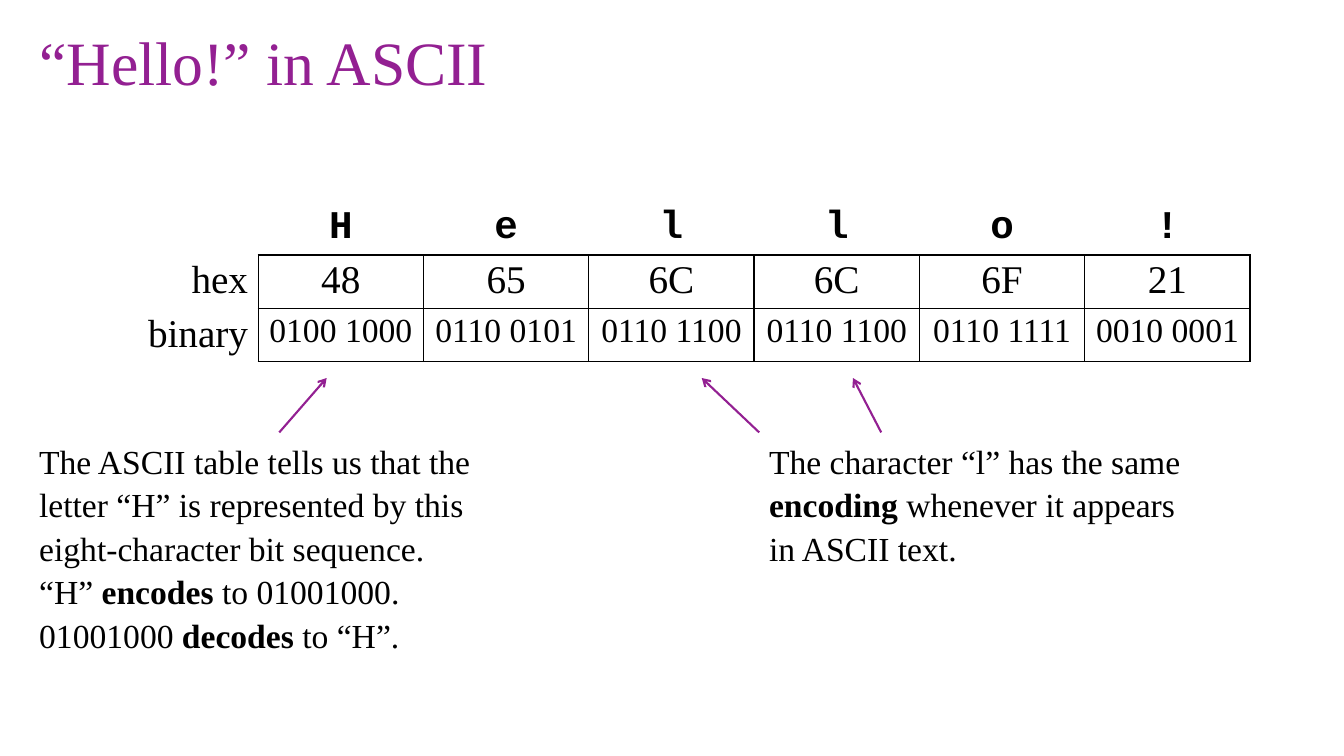
from dataclasses import dataclass

from lxml.etree import SubElement
from pptx import Presentation
from pptx.dml.color import RGBColor
from pptx.enum.shapes import MSO_CONNECTOR
from pptx.enum.text import MSO_ANCHOR, MSO_AUTO_SIZE, PP_ALIGN
from pptx.oxml.ns import qn
from pptx.util import Inches, Pt

COLORS = {"accent": "932092", "text": "000000"}
SERIF = "Times New Roman"
MONO = "Courier New"
NO_STYLE = "{2D5ABB26-0587-4C30-8999-92F81FD0307C}"
WORD = "Hello!"
COLUMN_WIDTH = 1.64
ROW_HEIGHT = 0.53
ARROW_TOP, ARROW_BOTTOM = 3.75, 4.29


@dataclass
class Note:
    left: float
    width: float
    height: float
    paragraphs: list[list[str]]
    bold: tuple[str, ...]


@dataclass
class Arrow:
    start: float
    end: float


NOTES = [
    Note(0.29, 4.96, 2.12, [
        ["The ASCII table tells us that the letter “H” is represented by this "
         "eight-character bit sequence."],
        ["“H” ", "encodes", " to 01001000."],
        ["01001000 ", "decodes", " to “H”."],
    ], ("encodes", "decodes")),
    Note(7.53, 4.5, 1.31, [
        ["The character “l” has the same ", "encoding ",
         "whenever it appears in ASCII text."],
    ], ("encoding ",)),
]
ARROWS = [Arrow(2.77, 3.24), Arrow(7.53, 6.96), Arrow(8.74, 8.46)]


def add_run(p, text: str, *, size: float, font: str = SERIF,
            color: str = "text", bold: bool = False) -> None:
    r = p.add_run()
    r.text = text
    r.font.size = Pt(size)
    r.font.name = font
    r.font.bold = bold
    r.font.color.rgb = RGBColor.from_string(COLORS[color])


def set_borders(cell, sides: str) -> None:
    tcPr = cell._tc.get_or_add_tcPr()
    for side in "LRTB":
        if side in sides:
            ln = SubElement(tcPr, qn(f"a:ln{side}"), w=str(Pt(1)))
            fill = SubElement(ln, qn("a:solidFill"))
            SubElement(fill, qn("a:srgbClr"), val=COLORS["text"])


def add_title(s, text: str) -> None:
    sp = s.shapes.title
    sp.left, sp.top = Inches(0.29), Inches(0.17)
    sp.width, sp.height = Inches(12.73), Inches(0.97)
    tf = sp.text_frame
    tf.vertical_anchor = MSO_ANCHOR.MIDDLE
    p = tf.paragraphs[0]
    p.alignment = PP_ALIGN.LEFT
    p.line_spacing = 0.9
    add_run(p, text, size=44, color="accent")


def fill_cell(cell, text: str, sides: str, align: PP_ALIGN, **fmt) -> None:
    cell.margin_top = cell.margin_bottom = Inches(0.04)
    set_borders(cell, sides)
    cell.fill.background()
    if text:
        p = cell.text_frame.paragraphs[0]
        p.alignment = align
        add_run(p, text, **fmt)


def add_code_table(s, word: str) -> None:
    bits = [f"{ord(char):08b}" for char in word]
    rows = [
        ("", list(word), "", "B", {"size": 28, "font": MONO, "bold": True}),
        ("hex", [f"{ord(char):02X}" for char in word], "R", "LRTB", {"size": 28}),
        ("binary", [f"{b[:4]} {b[4:]}" for b in bits], "R", "LRTB", {"size": 24}),
    ]
    columns = len(word) + 1
    table = s.shapes.add_table(
        len(rows), columns, Inches(0.92), Inches(2),
        Inches(COLUMN_WIDTH * columns), Inches(ROW_HEIGHT * len(rows))).table
    table.first_row = table.horz_banding = False
    table._tbl.tblPr.find(qn("a:tableStyleId")).text = NO_STYLE
    for column in table.columns:
        column.width = Inches(COLUMN_WIDTH)
    for i, (label, values, label_sides, sides, fmt) in enumerate(rows):
        table.rows[i].height = Inches(ROW_HEIGHT)
        fill_cell(table.cell(i, 0), label, label_sides, PP_ALIGN.RIGHT, size=28)
        for j, value in enumerate(values, 1):
            fill_cell(table.cell(i, j), value, sides, PP_ALIGN.CENTER, **fmt)


def add_note(s, note: Note) -> None:
    sp = s.shapes.add_textbox(Inches(note.left), Inches(ARROW_BOTTOM),
                              Inches(note.width), Inches(note.height))
    tf = sp.text_frame
    tf.word_wrap = True
    tf.auto_size = MSO_AUTO_SIZE.SHAPE_TO_FIT_TEXT
    for i, texts in enumerate(note.paragraphs):
        p = tf.add_paragraph() if i else tf.paragraphs[0]
        p.line_spacing = 1.08
        for text in texts:
            add_run(p, text, size=24, bold=text in note.bold)


def add_arrow(s, arrow: Arrow) -> None:
    sp = s.shapes.add_connector(
        MSO_CONNECTOR.STRAIGHT, Inches(arrow.start), Inches(ARROW_BOTTOM),
        Inches(arrow.end), Inches(ARROW_TOP))
    sp.line.color.rgb = RGBColor.from_string(COLORS["accent"])
    sp.line.width = Pt(1.5)
    SubElement(sp.line._get_or_add_ln(), qn("a:tailEnd"), type="arrow")
    SubElement(sp._element.spPr, qn("a:effectLst"))


def main() -> None:
    prs = Presentation()
    prs.slide_width, prs.slide_height = Inches(13.33), Inches(7.5)
    s = prs.slides.add_slide(prs.slide_layouts[5])
    add_title(s, f"“{WORD}” in ASCII")
    add_code_table(s, WORD)
    for note in NOTES:
        add_note(s, note)
    for arrow in ARROWS:
        add_arrow(s, arrow)
    prs.save("out.pptx")


if __name__ == "__main__":
    main()
